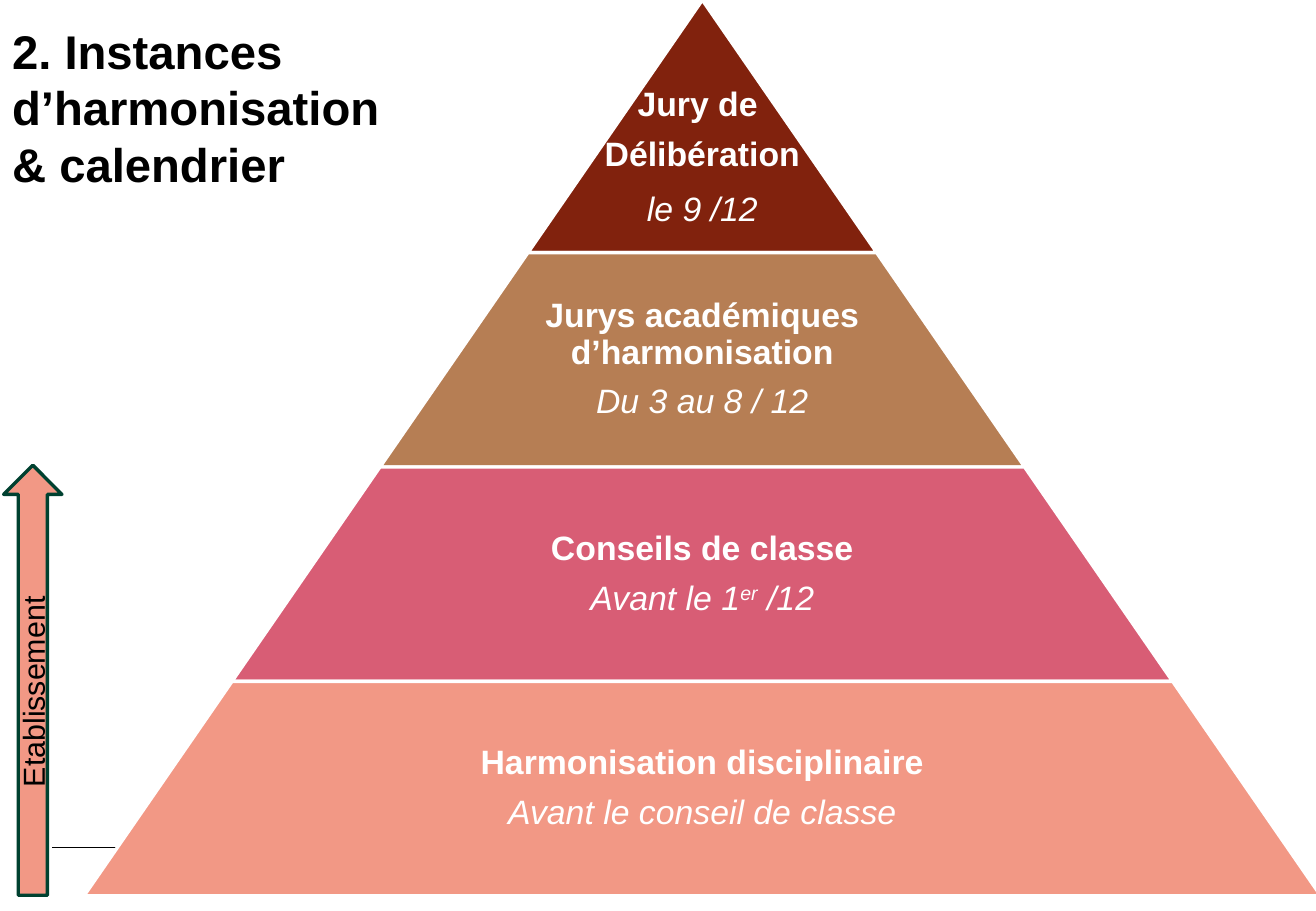
import pptx
import pptx.util
import pptx.dml.color
import pptx.enum.shapes
import pptx.enum.text
import pptx.oxml.ns
import lxml.etree

In, Pt = pptx.util.Inches, pptx.util.Pt
SHAPE = pptx.enum.shapes.MSO_SHAPE
ALIGN = pptx.enum.text.PP_ALIGN
ANCHOR = pptx.enum.text.MSO_ANCHOR
COLORS = {"black": "000000", "white": "FFFFFF", "green": "004130", "jury": "81220D",
          "academy": "B67E54", "class": "D85D75", "subject": "F29885"}


def rgb(name):
    return pptx.dml.color.RGBColor.from_string(COLORS[name])


def paint(sp, fill, line):
    sp.shadow.inherit = False
    sp.fill.solid()
    sp.fill.fore_color.rgb = rgb(fill)
    sp.line.color.rgb = rgb(line)
    sp.line.width = Pt(2)


prs = pptx.Presentation()
prs.slide_width, prs.slide_height = In(10.83), In(7.5)
s = prs.slides.add_slide(prs.slide_layouts[5])

# Title
sp = s.shapes.title
sp.left, sp.top, sp.width, sp.height = In(0), In(0.13), In(4.08), In(1.99)
sp.fill.solid()
sp.fill.fore_color.rgb = rgb("white")
tf = sp.text_frame
tf.text = "2. Instances d’harmonisation\n& calendrier"
tf.word_wrap = True
tf.auto_size = pptx.enum.text.MSO_AUTO_SIZE.NONE
tf.vertical_anchor = ANCHOR.TOP
for p in tf.paragraphs:
    p.alignment = ALIGN.LEFT
    p.line_spacing = 1.0
    p.space_before = Pt(0)
    f = p.runs[0].font
    f.name, f.size, f.bold = "Arial", Pt(28), True
    f.color.rgb = rgb("black")

# Base line, behind the pyramid
c = s.shapes.add_connector(pptx.enum.shapes.MSO_CONNECTOR.STRAIGHT,
                           In(0.43), In(6.98), In(10.41), In(6.98))
c.line.color.rgb = rgb("black")
c.line.width = Pt(0.8)
lxml.etree.SubElement(c._element.spPr, pptx.oxml.ns.qn("a:effectLst"))

# Pyramid: each tier is as wide as its bottom edge lies deep, times the slope
SLOPE, CENTER = 0.69, 5.78
TIER_H, TOP_H = 1.765, 2.08
# colour, share of the width for text, text offset, paragraphs (bold first, date last)
tiers = [
    ("jury", 1, 0.52, ["Jury de ", "Délibération", " le 9 /12 "]),
    ("academy", 0.65, 0, ["Jurys académiques d’harmonisation", "Du 3 au 8 / 12"]),
    ("class", 0.65, 0, ["Conseils de classe", "Avant le 1^er^ /12"]),
    ("subject", 0.65, 0, ["Harmonisation disciplinaire", "Avant le conseil de classe"]),
]
top = 0
for i, (color, share, offset, lines) in enumerate(tiers):
    h = TIER_H if i else TOP_H
    w = 2 * SLOPE * (top + h)
    sp = s.shapes.add_shape(SHAPE.TRAPEZOID, In(CENTER - w / 2), In(top), In(w), In(h))
    sp.adjustments[0] = SLOPE
    paint(sp, color, "white")

    box = s.shapes.add_textbox(In(CENTER - w * share / 2), In(top + offset),
                               In(w * share), In(h - offset))
    tf = box.text_frame
    tf.word_wrap = True
    tf.vertical_anchor = ANCHOR.MIDDLE
    tf.margin_left = tf.margin_right = tf.margin_top = tf.margin_bottom = In(0.03)
    for j, line in enumerate(lines):
        is_date = j == len(lines) - 1
        p = tf.paragraphs[0] if j == 0 else tf.add_paragraph()
        p.alignment = ALIGN.CENTER
        p.line_spacing = 1.0 if is_date and i == 0 else 0.9
        p.space_after = Pt(8)
        for k, part in enumerate(line.split("^")):  # odd parts are superscript
            r = p.add_run()
            r.text = part
            r.font.name, r.font.size = "Arial", Pt(20)
            r.font.bold, r.font.italic = not is_date, is_date
            r.font.color.rgb = rgb("white")
            if k % 2:
                r.font._element.set("baseline", "30000")
    top += h

# School arrow, pointing up
sp = s.shapes.add_shape(SHAPE.DOWN_ARROW, In(0.03), In(3.83), In(0.48), In(3.54))
sp.rotation = 180
paint(sp, "subject", "green")
tf = sp.text_frame
tf.text = "Etablissement "
tf.word_wrap = True
tf.vertical_anchor = ANCHOR.MIDDLE
tf._txBody.bodyPr.set("vert", "vert")
p = tf.paragraphs[0]
p.alignment = ALIGN.CENTER
f = p.runs[0].font
f.name, f.size = "Arial", Pt(18)
f.color.rgb = rgb("black")

prs.save("out.pptx")
